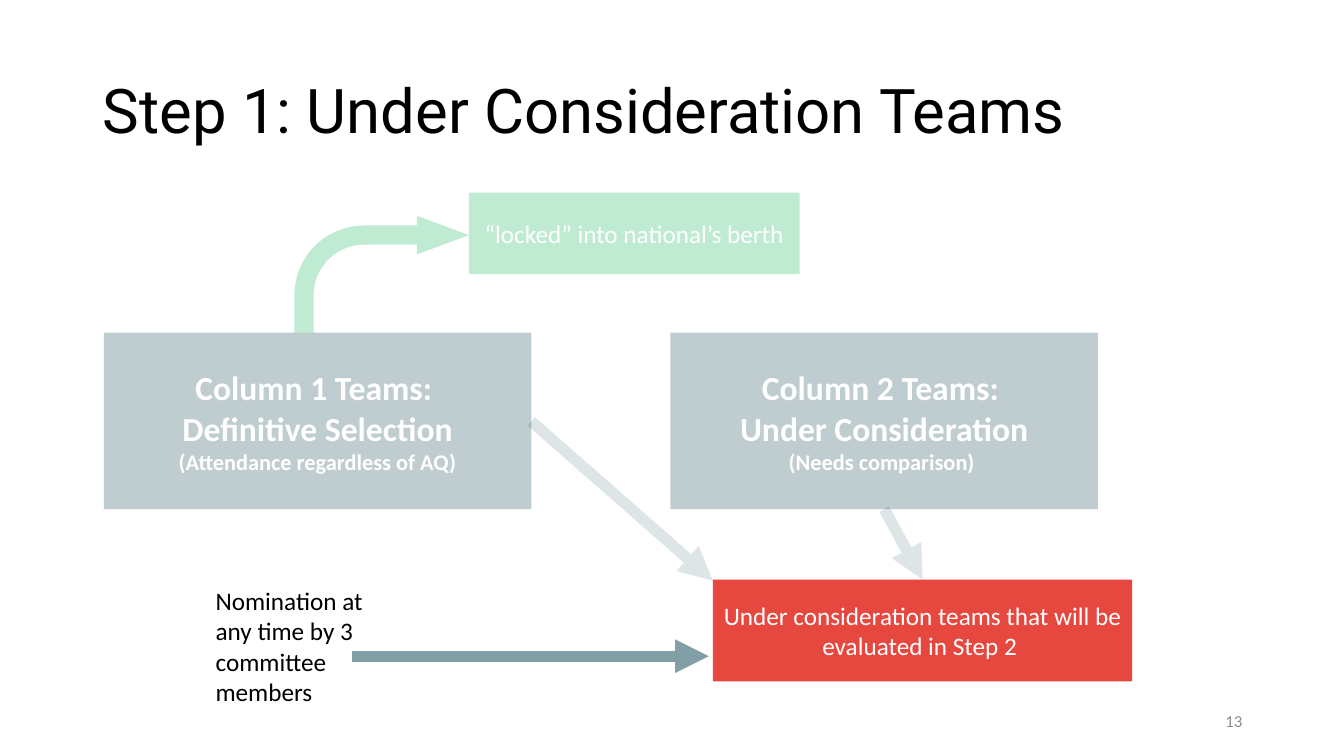
from pptx import Presentation
from pptx.dml.color import RGBColor
from pptx.enum.shapes import MSO_CONNECTOR, MSO_SHAPE
from pptx.enum.text import MSO_ANCHOR, PP_ALIGN
from pptx.oxml.ns import qn
from pptx.util import Inches, Pt
from lxml.etree import SubElement

BLACK = RGBColor(0x00, 0x00, 0x00)
WHITE = RGBColor(0xFF, 0xFF, 0xFF)
GRAY = RGBColor(0x8C, 0x8C, 0x8C)
GREEN = RGBColor(0x00, 0xB0, 0x50)
NAVY = RGBColor(0x00, 0x39, 0x4A)
SLATE = RGBColor(0x82, 0x9E, 0xA6)
RED = RGBColor(0xE6, 0x48, 0x40)
FADED = 25  # percent opacity of the steps out of focus


def set_opacity(shape, percent):
    for color in shape._element.spPr.iter(qn("a:srgbClr")):
        SubElement(color, qn("a:alpha")).set("val", str(percent * 1000))


def write_lines(shape, lines, color, align, anchor):
    """Fill a shape with one paragraph per (text, size, bold) line."""
    frame = shape.text_frame
    frame.word_wrap = True
    frame.vertical_anchor = anchor
    for index, (text, size, bold) in enumerate(lines):
        para = frame.paragraphs[0] if index == 0 else frame.add_paragraph()
        para.alignment = align
        span = para.add_run()
        span.text = text
        span.font.name = "Calibri"
        span.font.size = Pt(size)
        span.font.bold = bold
        span.font.color.rgb = color


deck = Presentation()
deck.slide_width, deck.slide_height = Inches(13.33), Inches(7.5)
page = deck.slides.add_slide(deck.slide_layouts[5])

# Title
title = page.shapes.title
title.left, title.top = Inches(0.92), Inches(0.4)
title.width, title.height = Inches(11.5), Inches(1.45)
title.text_frame.vertical_anchor = MSO_ANCHOR.MIDDLE
para = title.text_frame.paragraphs[0]
para.alignment = PP_ALIGN.LEFT
para.line_spacing = 0.9
span = para.add_run()
span.text = "Step 1: Under Consideration Teams"
span.font.name = "Roboto"
span.font.size = Pt(44)
span.font.color.rgb = BLACK

# Bent arrow from column 1 to the locked berth
bent_arrow = page.shapes.add_shape(
    MSO_SHAPE.BENT_ARROW, Inches(2.92), Inches(2.14), Inches(1.73), Inches(1.16))
for index, value in enumerate((0.164, 0.166, 0.445, 0.597)):
    bent_arrow.adjustments[index] = value
bent_arrow.shadow.inherit = False
bent_arrow.fill.solid()
bent_arrow.fill.fore_color.rgb = GREEN
bent_arrow.line.fill.background()
set_opacity(bent_arrow, FADED)

# Straight arrows into the evaluated teams
arrows = [
    (5.27, 4.18, 7.07, 5.76, FADED),
    (8.77, 5.05, 9.15, 5.75, FADED),
    (3.49, 6.51, 7.03, 6.51, 100),
]
for *ends, opacity in arrows:
    arrow = page.shapes.add_connector(MSO_CONNECTOR.STRAIGHT, *map(Inches, ends))
    arrow.line.color.rgb = SLATE
    arrow.line.width = Pt(8)
    SubElement(arrow.line._get_or_add_ln(), qn("a:tailEnd")).set("type", "triangle")
    SubElement(arrow._element.spPr, qn("a:effectLst"))
    if opacity < 100:
        set_opacity(arrow, opacity)

# Plain text: nomination note and page number
notes = [
    (2.04, 5.76, 1.83, 1.31, "Nomination at any time by 3 committee members",
     18, BLACK, PP_ALIGN.LEFT, MSO_ANCHOR.TOP),
    (9.42, 6.95, 3, 0.4, "13", 12, GRAY, PP_ALIGN.RIGHT, MSO_ANCHOR.MIDDLE),
]
for *place, text, size, color, align, anchor in notes:
    note = page.shapes.add_textbox(*map(Inches, place))
    write_lines(note, [(text, size, False)], color, align, anchor)

# Filled boxes
boxes = [
    (1.03, 3.3, 4.24, 1.75, NAVY, FADED,
     [("Column 1 Teams: ", 24, True), ("Definitive Selection", 24, True),
      ("(Attendance regardless of AQ)", 16, True)]),
    (6.65, 3.3, 4.24, 1.75, NAVY, FADED,
     [("Column 2 Teams: ", 24, True), ("Under Consideration", 24, True),
      ("(Needs comparison) ", 16, True)]),
    (4.65, 1.91, 3.28, 0.81, GREEN, FADED,
     [("“locked” into national’s berth", 18, False)]),
    (7.07, 5.75, 4.16, 1.01, RED, 100,
     [("Under consideration teams that will be evaluated in Step 2 ", 18, False)]),
]
for *place, color, opacity, lines in boxes:
    box = page.shapes.add_shape(MSO_SHAPE.RECTANGLE, *map(Inches, place))
    box.shadow.inherit = False
    box.fill.solid()
    box.fill.fore_color.rgb = color
    box.line.fill.background()
    if opacity < 100:
        set_opacity(box, opacity)
    write_lines(box, lines, WHITE, PP_ALIGN.CENTER, MSO_ANCHOR.MIDDLE)

deck.save("out.pptx")
